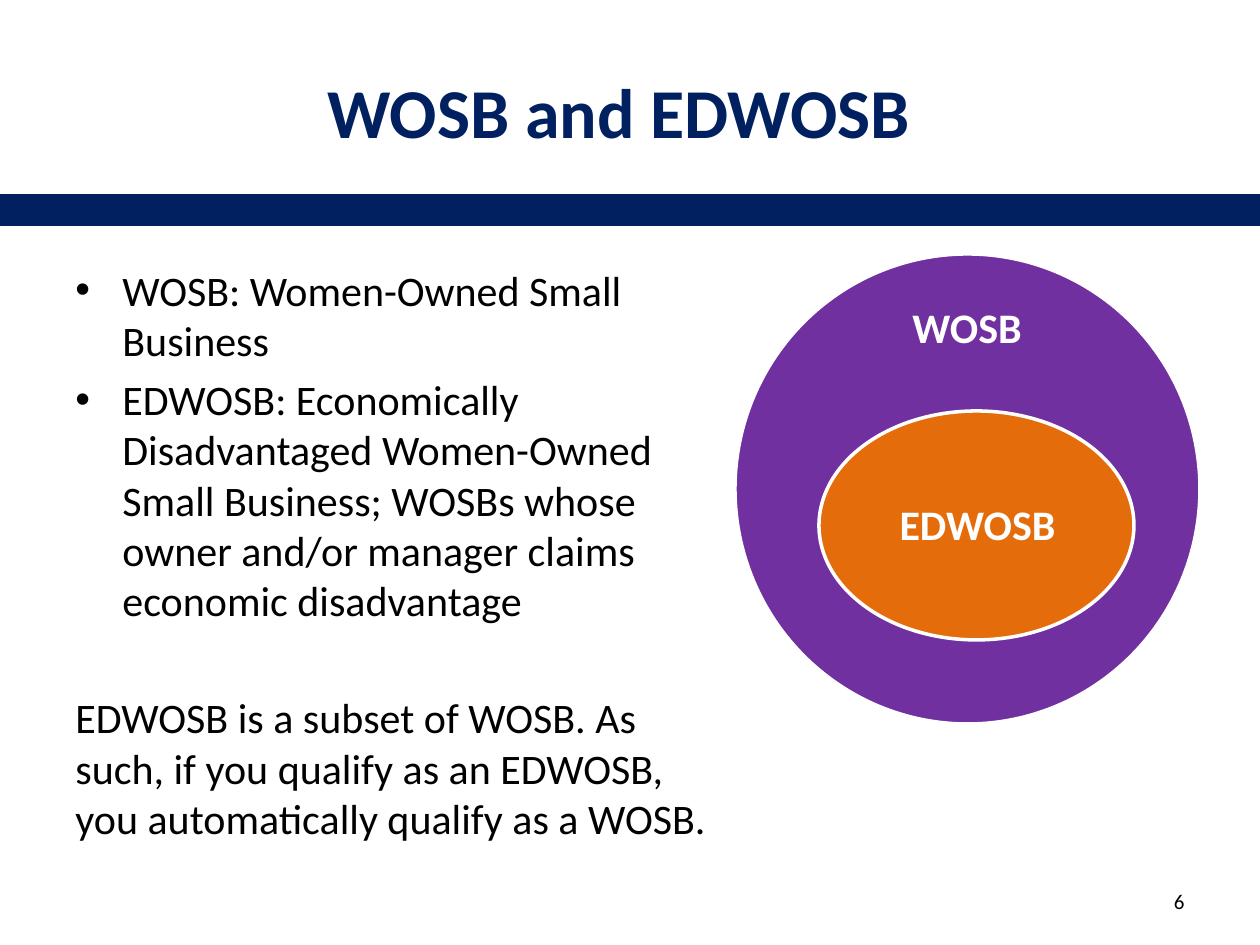
from typing import NamedTuple

from lxml import etree
from pptx import Presentation
from pptx import util as u
from pptx.dml.color import RGBColor
from pptx.enum import shapes, text
from pptx.oxml.ns import qn

EMU_PER_PX = 914400 / 126
FONT = "Calibri"
NAVY = RGBColor(0x00, 0x20, 0x60)
PURPLE = RGBColor(0x70, 0x30, 0xA0)
ORANGE = RGBColor(0xE4, 0x6C, 0x0A)
WHITE = RGBColor(0xFF, 0xFF, 0xFF)
BLACK = RGBColor(0x00, 0x00, 0x00)
ALIGN = text.PP_ALIGN
ANCHOR = text.MSO_ANCHOR


class Box(NamedTuple):
    left: int
    top: int
    width: int
    height: int


class Style(NamedTuple):
    size: int
    color: RGBColor = BLACK
    bold: bool = False
    align: ALIGN = ALIGN.LEFT
    anchor: ANCHOR = ANCHOR.MIDDLE


class Item(NamedTuple):
    words: str
    space_before: float = 0
    bulleted: bool = False


class SetOval(NamedTuple):
    name: str
    oval: Box
    label: Box
    fill: RGBColor


TITLE_STYLE = Style(40, NAVY, bold=True)
BODY_STYLE = Style(24, anchor=ANCHOR.TOP)
LABEL_STYLE = Style(24, WHITE, bold=True, align=ALIGN.CENTER)
NUMBER_STYLE = Style(12, align=ALIGN.RIGHT)

BULLET_INDENT = 47
BODY_ITEMS = [
    Item("WOSB: Women-Owned Small Business", bulleted=True),
    Item("EDWOSB: Economically Disadvantaged Women-Owned Small Business; "
         "WOSBs whose owner and/or manager claims economic disadvantage", 4.8, True),
    Item("EDWOSB is a subset of WOSB. As such, if you qualify as an EDWOSB, "
         "you automatically qualify as a WOSB.", 38),
]
SET_OVALS = [
    SetOval("WOSB", Box(735, 254, 465, 470), Box(845, 290, 244, 79), PURPLE),
    SetOval("EDWOSB", Box(819, 411, 315, 229), Box(866, 469, 223, 115), ORANGE),
]


def px(length: int) -> u.Emu:
    return u.Emu(round(length * EMU_PER_PX))


def emu(box: Box) -> list[u.Emu]:
    return [px(length) for length in box]


def add_bullet(paragraph) -> None:
    properties = paragraph._p.get_or_add_pPr()
    properties.set("marL", str(px(BULLET_INDENT)))
    properties.set("indent", str(-px(BULLET_INDENT)))
    etree.SubElement(properties, qn("a:buFont")).set("typeface", "Arial")
    etree.SubElement(properties, qn("a:buChar")).set("char", "•")


def add_text(slide, box: Box, items: list[Item], style: Style):
    shape = slide.shapes.add_textbox(*emu(box))
    frame = shape.text_frame
    frame.word_wrap = True
    frame.vertical_anchor = style.anchor
    for index, item in enumerate(items):
        paragraph = frame.add_paragraph() if index else frame.paragraphs[0]
        paragraph.alignment = style.align
        if item.space_before:
            paragraph.space_before = u.Pt(item.space_before)
        if item.bulleted:
            add_bullet(paragraph)
        run = paragraph.add_run()
        run.text = item.words
        run.font.name = FONT
        run.font.size = u.Pt(style.size)
        run.font.bold = style.bold
        run.font.color.rgb = style.color
    return shape


def add_rule(slide, y: int, width: int) -> None:
    """Draw the thick line across the slide below the title."""
    rule = slide.shapes.add_connector(
        shapes.MSO_CONNECTOR.STRAIGHT, 0, px(y), px(width), px(y))
    rule.line.color.rgb = NAVY
    rule.line.width = u.Pt(18)
    etree.SubElement(rule._element.spPr, qn("a:effectLst"))


def add_set_oval(slide, item: SetOval) -> None:
    oval = slide.shapes.add_shape(shapes.MSO_SHAPE.OVAL, *emu(item.oval))
    oval.shadow.inherit = False
    oval.fill.solid()
    oval.fill.fore_color.rgb = item.fill
    oval.line.color.rgb = WHITE
    oval.line.width = u.Pt(2)
    label = add_text(slide, item.label, [Item(item.name)], LABEL_STYLE)
    frame = label.text_frame
    frame.margin_left = frame.margin_right = px(24)
    frame.margin_top = frame.margin_bottom = px(24)
    frame.paragraphs[0].line_spacing = 0.9


def main() -> None:
    presentation = Presentation()
    presentation.slide_width = px(1260)
    presentation.slide_height = px(945)
    slide = presentation.slides.add_slide(presentation.slide_layouts[6])
    add_rule(slide, 210, 1260)
    add_text(slide, Box(315, 32, 914, 158), [Item("WOSB and EDWOSB")], TITLE_STYLE)
    add_text(slide, Box(63, 258, 662, 617), BODY_ITEMS, BODY_STYLE)
    for item in SET_OVALS:
        add_set_oval(slide, item)
    add_text(slide, Box(903, 876, 294, 50), [Item("6")], NUMBER_STYLE)
    presentation.save("out.pptx")


if __name__ == "__main__":
    main()
